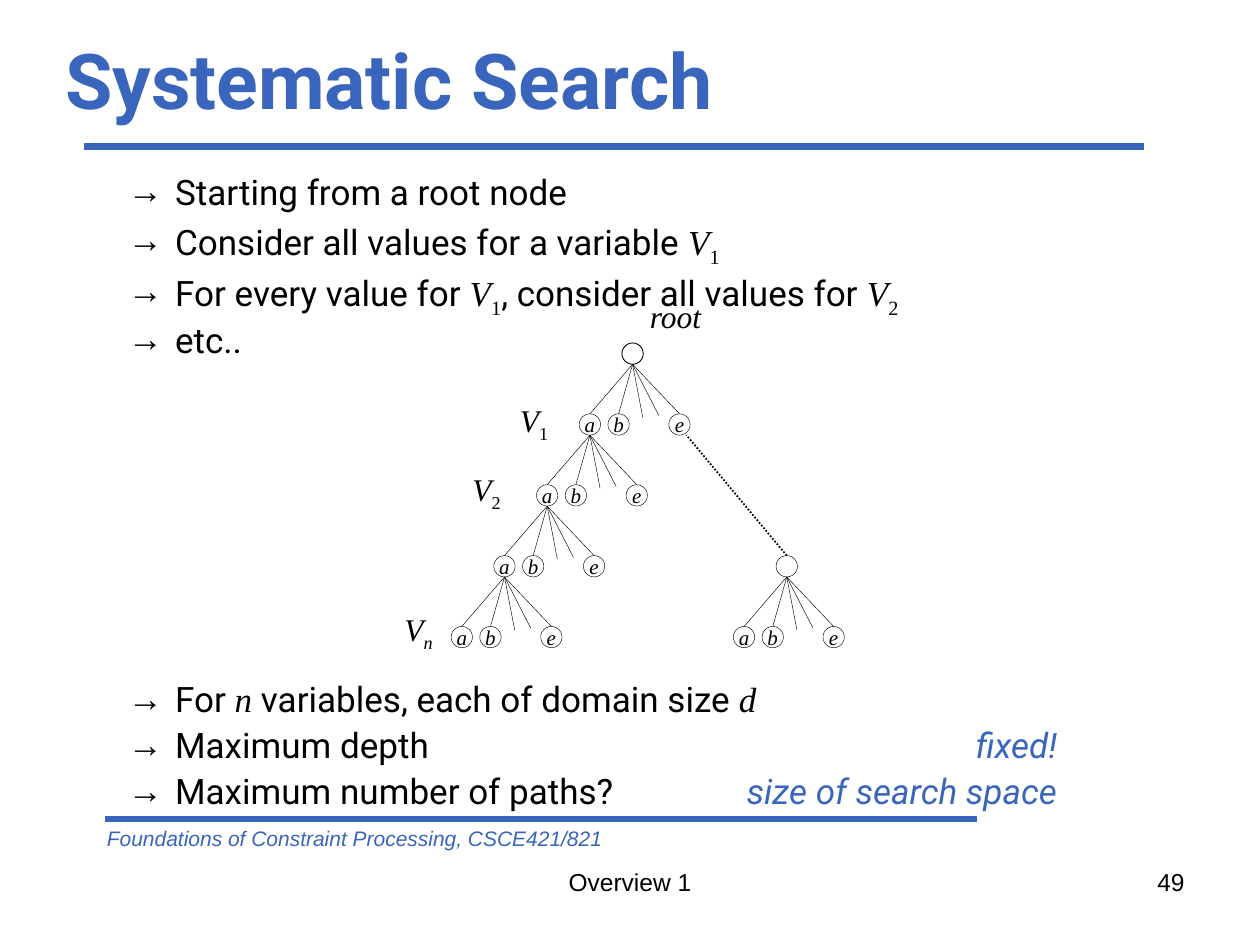
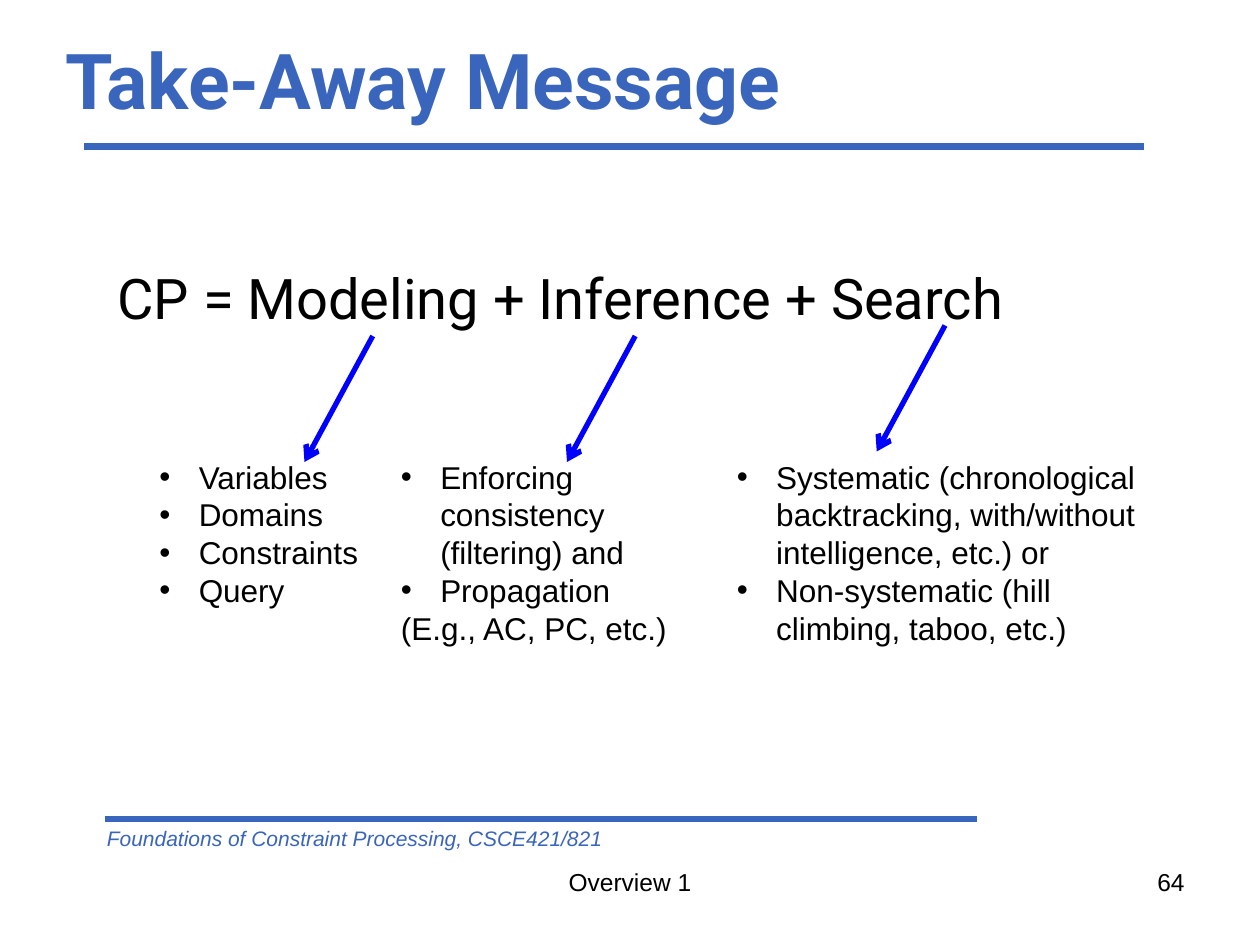
from lxml import etree
from pptx import Presentation
from pptx.dml.color import RGBColor
from pptx.enum.dml import MSO_LINE
from pptx.enum.shapes import MSO_CONNECTOR, MSO_SHAPE
from pptx.enum.text import MSO_ANCHOR, MSO_AUTO_SIZE, PP_ALIGN
from pptx.oxml.ns import qn
from pptx.util import Pt

LEFT, MID, RIGHT = PP_ALIGN.LEFT, PP_ALIGN.CENTER, PP_ALIGN.RIGHT
OVAL, STRAIGHT, DOTS = MSO_SHAPE.OVAL, MSO_CONNECTOR.STRAIGHT, MSO_LINE.ROUND_DOT
CENTRE, FIXED = MSO_ANCHOR.MIDDLE, MSO_AUTO_SIZE.NONE

HEX = {"theme": "3A65BC", "ink": "000000", "arrow": "0000FF"}
SANS, BODY, MATH = "Arial", "Roboto", "Times New Roman"

# style: font, colour, italic, baseline in 1/1000 percent
STYLES = {
    "text": (BODY, "ink", False, 0),
    "var": (MATH, "ink", True, 0),
    "sub": (MATH, "ink", False, -25000),
    "varsub": (MATH, "ink", True, -25000),
    "note": (BODY, "theme", True, 0),
    "plain": (SANS, "ink", False, 0),
}

# Content
COURSE = "Foundations of Constraint Processing, CSCE421/821"
DECK = "Overview 1"
V1 = [("V", "var"), ("1", "sub")]
V2 = [("V", "var"), ("2", "sub")]
VN = [("V", "var"), ("n", "varsub")]

STEPS = [
    [("Starting from a root node", "text")],
    [("Consider all values for a variable ", "text"), *V1],
    [("For every value for ", "text"), *V1,
     (", consider all values for ", "text"), *V2],
    [("etc..", "text")],
]
FACTS = [
    [("For ", "text"), ("n", "var"),
     (" variables, each of domain size ", "text"), ("d", "var")],
    [("Maximum depth\t", "text"), ("fixed!", "note")],
    [("Maximum number of paths?\t", "text"), ("size of search space", "note")],
]
LABELS = [
    ([("root", "var")], 364.3, 166.3, 46),
    (V1, 290, 225.4, 32),
    (V2, 262.8, 265, 32),
    (VN, 224, 345, 32),
]

FORMULA = "CP = Modeling + Inference + Search"
# left, width, [(bullet, text)]
PARTS = [
    (84, 132, [("•", "Variables"), ("•", "Domains"),
               ("•", "Constraints"), ("•", "Query")]),
    (222, 186, [("•", "Enforcing consistency (filtering) and"),
                ("•", "Propagation"), ("", "(E.g., AC, PC, etc.)")]),
    (414, 258, [
        ("•", "Systematic (chronological backtracking, with/without "
              "intelligence, etc.) or"),
        ("•", "Non-systematic (hill climbing, taboo, etc.)")]),
]
ARROWS = [(213, 192), (363, 192), (540, 186)]
ARROW_DX, ARROW_DY = -39, 72

# Search tree
ROOT_X, ROOT_Y = 361.5, 196
NODE = 12.2
LEVEL = 40.5
DEPTH = 4
KIDS = {"a": -24.4, "b": -8, "e": 26.8}
STUBS = [(15, 1), (5.8, 2)]     # offset from parent, drop below child tops
SIDE_X = 449.6


def rgb(name):
    return RGBColor.from_string(HEX[name])


def style(run, kind, size):
    face, hue, slant, base = STYLES[kind]
    run.font.name, run.font.size = face, Pt(size)
    run.font.color.rgb, run.font.italic = rgb(hue), slant
    if base:
        run._r.get_or_add_rPr().set("baseline", str(base))


def fill_para(para, runs, size):
    for text, kind in runs:
        run = para.add_run()
        run.text = text
        style(run, kind, size)


def hang(para, mark, depth, tab=None):
    """Give a hanging indent, an optional bullet and a right tab stop."""
    props = para._p.get_or_add_pPr()
    props.set("marL", str(Pt(depth)))
    props.set("indent", str(Pt(-depth)))
    if mark:
        hue = etree.SubElement(props, qn("a:buClr"))
        etree.SubElement(hue, qn("a:srgbClr"), val=HEX["ink"])
        etree.SubElement(props, qn("a:buFont"), typeface=SANS)
        etree.SubElement(props, qn("a:buChar"), char=mark)
    else:
        etree.SubElement(props, qn("a:buNone"))
    if tab:
        stops = etree.SubElement(props, qn("a:tabLst"))
        etree.SubElement(stops, qn("a:tab"), pos=str(Pt(tab)), algn="r")


def add_box(slide, x, y, w, h, wrap=True):
    frame = slide.shapes.add_textbox(Pt(x), Pt(y), Pt(w), Pt(h)).text_frame
    frame.word_wrap = wrap
    return frame


def add_text(slide, area, runs, size, align=LEFT, wrap=True):
    para = add_box(slide, *area, wrap).paragraphs[0]
    para.alignment = align
    fill_para(para, runs, size)


def add_list(slide, area, items, size, depth, gap=0, space=1.0, tab=None):
    """Write items of (bullet, runs) as paragraphs of one box."""
    frame = add_box(slide, *area)
    for i, (mark, runs) in enumerate(items):
        para = frame.add_paragraph() if i else frame.paragraphs[0]
        hang(para, mark, depth, tab)
        para.line_spacing = space
        para.space_before = Pt(gap if i else 0)
        fill_para(para, runs, size)


def add_line(slide, start, end, hue="ink", width=0.25, dash=None, tip=None):
    line = slide.shapes.add_connector(STRAIGHT, *map(Pt, start + end))
    line.line.color.rgb, line.line.width = rgb(hue), Pt(width)
    if dash:
        line.line.dash_style = dash
    if tip:
        etree.SubElement(line.line._get_or_add_ln(), qn("a:tailEnd"), type=tip)
    etree.SubElement(line._element.spPr, qn("a:effectLst"))
    return line


def add_node(slide, x, y, letter="", width=0.25):
    """Draw a tree node centred on x with its top at y."""
    node = slide.shapes.add_shape(OVAL, Pt(x - NODE / 2), Pt(y), Pt(NODE), Pt(NODE))
    node.shadow.inherit = False
    node.fill.background()
    node.line.color.rgb, node.line.width = rgb("ink"), Pt(width)
    if letter:
        frame = node.text_frame
        frame.margin_left = frame.margin_right = 0
        frame.margin_top = frame.margin_bottom = 0
        frame.word_wrap, frame.vertical_anchor = False, CENTRE
        frame.text = letter
        frame.paragraphs[0].alignment = MID
        style(frame.paragraphs[0].runs[0], "var", 12)
    return node


def add_fan(slide, x, y):
    """Draw the children of the node at x, y and the lines to them."""
    foot, top = (x, y + NODE), y + LEVEL
    for letter, dx in KIDS.items():
        kid = add_node(slide, x + dx, top, letter)
        add_line(slide, (x + dx, top), foot).begin_connect(kid, 0)
    for dx, drop in STUBS:
        add_line(slide, (x + dx, top + drop), foot)


def add_tree(slide):
    add_node(slide, ROOT_X, ROOT_Y, width=0.5)
    for i in range(DEPTH):
        add_fan(slide, ROOT_X + i * KIDS["a"], ROOT_Y + i * LEVEL)
    side_y = ROOT_Y + (DEPTH - 1) * LEVEL
    side = add_node(slide, SIDE_X, side_y)
    add_fan(slide, SIDE_X, side_y)
    last = (ROOT_X + KIDS["e"] + 4, ROOT_Y + LEVEL + NODE)
    add_line(slide, (SIDE_X, side_y), last, width=1, dash=DOTS).begin_connect(side, 0)
    for runs, x, y, w in LABELS:
        add_text(slide, (x, y, w, 29), runs, 18, wrap=False)


def add_slide(deck, title, number):
    """Add a slide with the shared title, rules and footer."""
    slide = deck.slides.add_slide(deck.slide_layouts[5])
    head = slide.shapes.title
    head.left, head.top, head.width, head.height = map(Pt, (30, 0, 648, 90))
    frame = head.text_frame
    frame.text = title
    frame.auto_size, frame.vertical_anchor = FIXED, CENTRE
    para = frame.paragraphs[0]
    para.alignment = LEFT
    font = para.runs[0].font
    font.name, font.size, font.bold = BODY, Pt(44), True
    font.color.rgb = rgb("theme")
    for x, y, end in [(48, 84, 654), (60, 468, 558)]:
        add_line(slide, (x, y), (end, y), "theme", 4)
    note = add_box(slide, 54, 468, 378, 22)
    note.text = COURSE
    run = note.paragraphs[0].runs[0]
    style(run, "note", 12)
    run.font.name = SANS
    add_text(slide, (246, 492, 228, 37.5), [(DECK, "plain")], 14, MID)
    add_text(slide, (516, 492, 168, 37.5), [(number, "plain")], 14, RIGHT)
    return slide


def main():
    deck = Presentation()
    deck.slide_width, deck.slide_height = Pt(720), Pt(540)

    search = add_slide(deck, "Systematic Search", "49")
    for y, h, rows in [(96.5, 120, STEPS), (386.5, 82, FACTS)]:
        add_list(search, (66, y, 573, h), [("→", runs) for runs in rows],
                 20, 27, gap=4.6, space=0.9, tab=531)
    add_tree(search)

    message = add_slide(deck, "Take-Away Message", "64")
    add_text(message, (60, 147, 640, 46), [(FORMULA, "text")], 32)
    for x, w, rows in PARTS:
        items = [(mark, [(text, "plain")]) for mark, text in rows]
        add_list(message, (x, 258, w, 116), items, 18, 22.5)
    for x, y in ARROWS:
        add_line(message, (x, y), (x + ARROW_DX, y + ARROW_DY), "arrow", 3, tip="arrow")

    deck.save("out.pptx")


if __name__ == "__main__":
    main()
